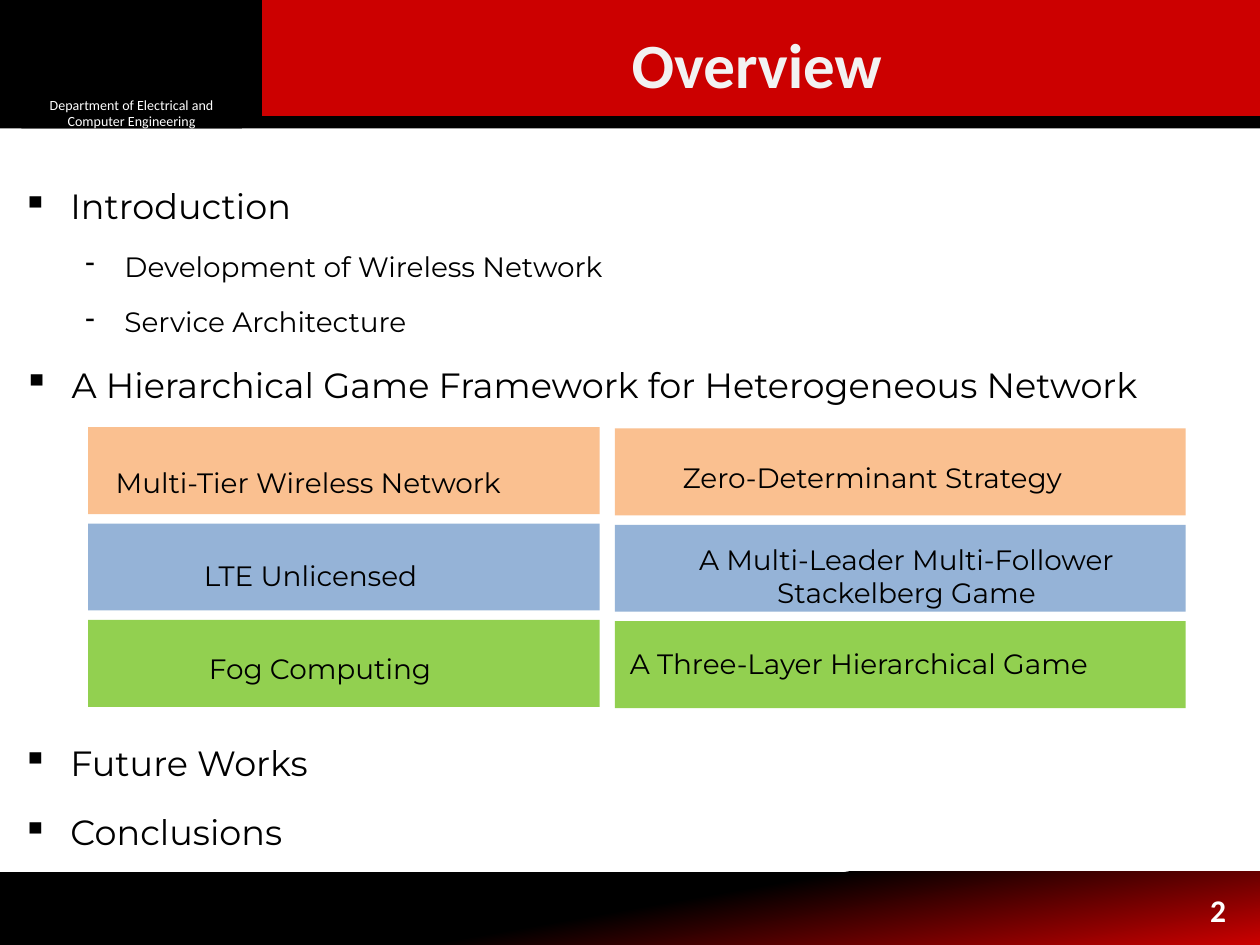
from dataclasses import dataclass

from lxml import etree
from pptx import Presentation
from pptx.dml.color import RGBColor
from pptx.enum.shapes import MSO_SHAPE
from pptx.enum.text import MSO_ANCHOR, PP_ALIGN
from pptx.oxml.ns import qn
from pptx.util import Inches, Pt

RECT = MSO_SHAPE.RECTANGLE
LEFT, CENTER, RIGHT = PP_ALIGN.LEFT, PP_ALIGN.CENTER, PP_ALIGN.RIGHT
TOP, MIDDLE = MSO_ANCHOR.TOP, MSO_ANCHOR.MIDDLE
TITLE_ONLY = 5


@dataclass(frozen=True)
class Theme:
    black: str = "000000"
    white: str = "FFFFFF"
    red: str = "CC0000"
    title: str = "F2F2F2"
    orange: str = "FAC090"
    blue: str = "95B3D7"
    green: str = "92D050"
    head_font: str = "Calibri"
    body_font: str = "Montserrat"
    title_size: int = 36
    topic_size: int = 20
    detail_size: int = 16
    number_size: int = 18
    label_size: int = 8


T = Theme()


def rgb(color):
    return RGBColor.from_string(color)


def add_rect(s, box, color):
    sp = s.shapes.add_shape(RECT, *map(Inches, box))
    sp.shadow.inherit = False
    sp.fill.solid()
    sp.fill.fore_color.rgb = rgb(color)
    sp.line.fill.background()
    return sp


def write(p, text, size=T.detail_size, font=T.body_font, color=T.black, bold=False,
          align=LEFT, spacing=1.0, before=0, bullet=None, indent=0, hang=0):
    pPr = p._p.get_or_add_pPr()
    if bullet:
        pPr.set("marL", str(Inches(indent)))
        pPr.set("indent", str(-Inches(hang)))
        etree.SubElement(pPr, qn("a:buChar")).set("char", bullet)
    p.alignment = align
    p.line_spacing = spacing
    p.space_before = Pt(before)
    r = p.add_run()
    r.text = text
    r.font.size = Pt(size)
    r.font.name = font
    r.font.bold = bold
    r.font.color.rgb = rgb(color)


def add_text(s, box, text, **fmt):
    tf = s.shapes.add_textbox(*map(Inches, box)).text_frame
    tf.word_wrap = True
    write(tf.paragraphs[0], text, **fmt)
    return tf


def add_topic(s, box, text, details=()):
    tf = add_text(s, box, text, size=T.topic_size, spacing=1.5,
                  bullet="▪", indent=0.38, hang=0.38)
    for detail in details:
        p = tf.add_paragraph()
        p.level = 1
        write(p, detail, spacing=1.5, before=3.2, bullet="-", indent=0.81, hang=0.31)


def add_header(s, box, title, department):
    x, y, w, h = box
    logo_w = 2.08
    add_rect(s, box, T.black)
    label = add_rect(s, (x + 0.17, y + 0.77, 1.75, 0.25), T.black)
    label.text_frame.word_wrap = True
    label.text_frame.vertical_anchor = MIDDLE
    write(label.text_frame.paragraphs[0], department, size=T.label_size,
          font=T.head_font, color=T.white, align=CENTER)
    add_rect(s, (x + logo_w, y, w - logo_w, h - 0.1), T.red)

    sp = s.shapes.title
    sp.left, sp.top, sp.width, sp.height = map(Inches, (x + 2.42, y + 0.17, 7.17, 0.67))
    sp.text_frame.vertical_anchor = MIDDLE
    write(sp.text_frame.paragraphs[0], title, size=T.title_size,
          font=T.head_font, color=T.title, bold=True, align=CENTER)
    s.shapes._spTree.append(sp._element)  # bring the title in front of the band


def add_footer(s, box, number):
    x, y, w, h = box
    fill = add_rect(s, box, T.black).fill
    fill.gradient()
    fill.gradient_angle = 280
    for stop, (position, color) in zip(fill.gradient_stops, ((0.5, T.black), (1, T.red))):
        stop.position = position
        stop.color.rgb = rgb(color)
    add_text(s, (x + w - 2.5, y + 0.1, 2.33, 0.4), number, size=T.number_size,
             font=T.head_font, color=T.white, bold=True, align=RIGHT)


def add_framework(s, box):
    """Pair each network (left) with its game model (right), one colour a row."""
    x, y, w, h = box
    left_w, right_w, cell_h = 4.06, 4.53, 0.69
    right_x = x + w - right_w
    pitch = (h - cell_h) / 2
    # colour, (network, inset, width), (game, inset, drop, width, height, alignment)
    rows = (
        (T.orange, ("Multi-Tier Wireless Network", 0.12, 3.63),
         ("Zero-Determinant Strategy", 0.44, 0.22, 3.58, 0.37, LEFT)),
        (T.blue, ("LTE Unlicensed", 0.82, 2.11),
         ("A Multi-Leader Multi-Follower Stackelberg Game",
          0.18, 0.1, 4.27, 0.64, CENTER)),
        (T.green, ("Fog Computing", 0.86, 2.04),
         ("A Three-Layer Hierarchical Game", 0.02, 0.16, 4.68, 0.37, LEFT)),
    )
    for i, (color, network, game) in enumerate(rows):
        top = y + i * pitch
        add_rect(s, (x, top, left_w, cell_h), color)
        add_rect(s, (right_x, top + 0.01, right_w, cell_h), color)
        text, inset, width = network
        add_text(s, (x + inset, y + 0.12 + i * 0.74, width, 0.5), text, spacing=1.5)
        text, inset, drop, width, height, align = game
        add_text(s, (right_x + inset, top + drop, width, height), text, align=align)


def main():
    prs = Presentation()
    prs.slide_width, prs.slide_height = Inches(10), Inches(7.5)
    s = prs.slides.add_slide(prs.slide_layouts[TITLE_ONLY])
    add_footer(s, (0, 6.92, 10, 0.58), "2")
    add_header(s, (0, 0, 10, 1.02), "Overview",
               "Department of Electrical and Computer Engineering")
    add_topic(s, (0.08, 1.25, 9.83, 1.47), "Introduction",
              ("Development of Wireless Network", "Service Architecture"))
    add_topic(s, (0.09, 2.67, 9.94, 0.55),
              "A Hierarchical Game Framework for Heterogeneous Network")
    add_framework(s, (0.7, 3.39, 8.71, 2.22))
    add_topic(s, (0.08, 5.67, 2.63, 0.55), "Future Works")
    add_topic(s, (0.08, 6.22, 2.54, 0.55), "Conclusions")
    prs.save("out.pptx")


if __name__ == "__main__":
    main()
